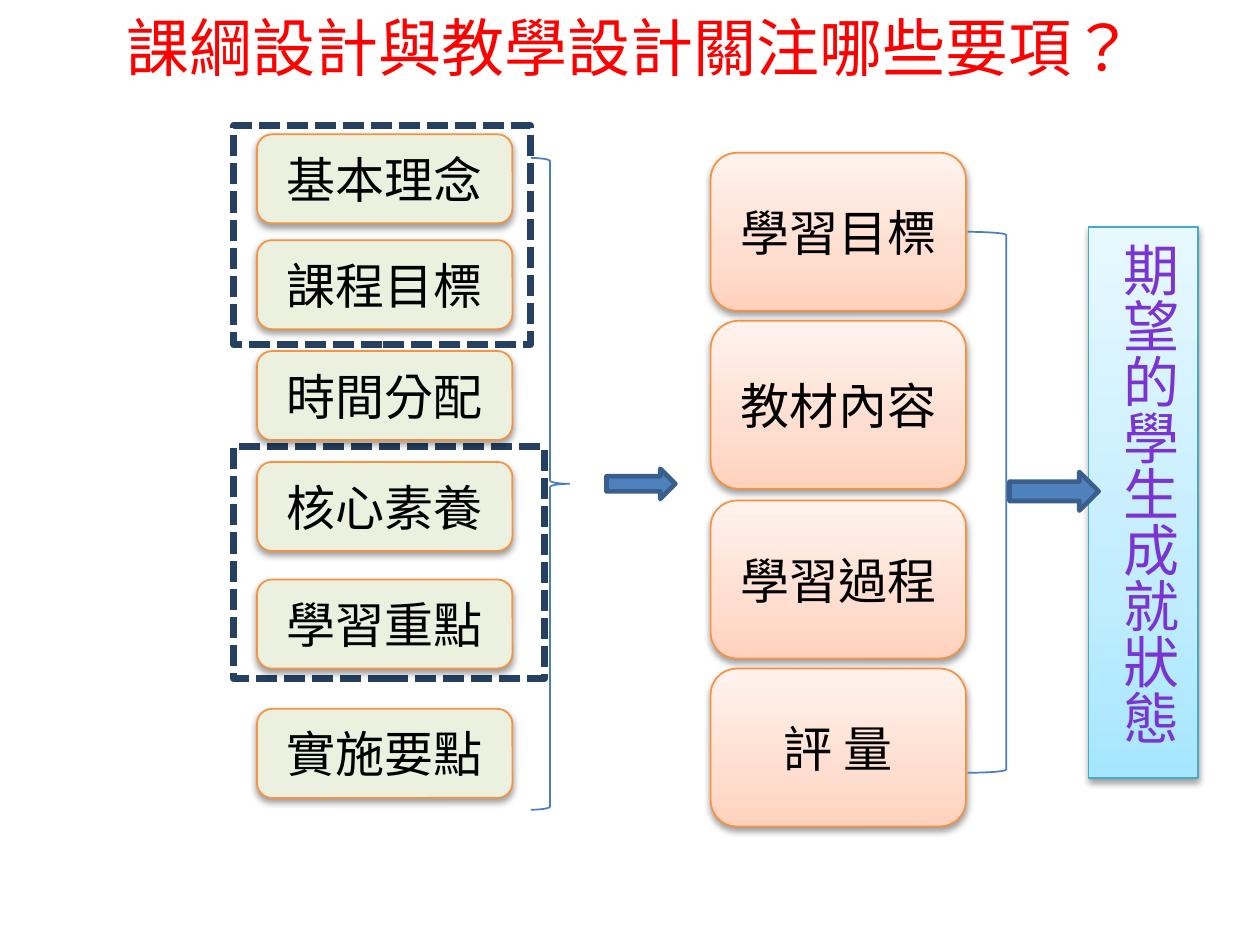
import copy
import pptx
import pptx.util
import pptx.dml.color
import pptx.enum.dml
import pptx.enum.shapes
import pptx.enum.text
import pptx.oxml
import pptx.oxml.ns

Inches = pptx.util.Inches
Pt = pptx.util.Pt
SHAPE = pptx.enum.shapes.MSO_SHAPE
ALIGN = pptx.enum.text.PP_ALIGN
ANCHOR = pptx.enum.text.MSO_ANCHOR
qn = pptx.oxml.ns.qn

FONT = "Noto Sans CJK SC"
COLORS = {
    "title": "FF0000", "text": "000000", "goal": "7B34D2",
    "white": "FFFFFF", "dash": "254061", "green": "EBF1DE",
    "orange": "F69240", "teal": "46AAC5", "brace": "4B7EBC",
    "arrow": "4F81BD", "arrow_edge": "3A5F8C",
}
PEACH = [(0, "FFD2BD"), (0.35, "FFDED0"), (1, "FFF2ED")]
SKY = [(0, "A7E6FF"), (0.35, "C1EDFF"), (1, "E7F8FF")]
SHADOW = (
    f'<a:outerShdw {pptx.oxml.ns.nsdecls("a")} blurRad="{Pt(3.1)}" '
    f'dist="{Pt(1.6)}" dir="5400000" rotWithShape="0">'
    '<a:srgbClr val="000000"><a:alpha val="38000"/></a:srgbClr></a:outerShdw>'
)


def rgb(value):
    return pptx.dml.color.RGBColor.from_string(value)


def write(s, text, size=21, color="text", align=ALIGN.CENTER,
          anchor=ANCHOR.MIDDLE, spacing=None, margins=(0.08, 0.04, 0.08, 0.04)):
    tf = s.text_frame
    tf.word_wrap = True
    tf.auto_size = pptx.enum.text.MSO_AUTO_SIZE.NONE
    tf.vertical_anchor = anchor
    tf.margin_left, tf.margin_top, tf.margin_right, tf.margin_bottom = map(Inches, margins)
    p = tf.paragraphs[0]
    p.alignment = align
    p.line_spacing = spacing
    r = p.add_run()
    r.text = text
    r.font.size = Pt(size)
    r.font.name = FONT
    r.font.color.rgb = rgb(COLORS[color])
    r.font._element.set("lang", "zh-TW")
    ea = pptx.oxml.parse_xml(f'<a:ea {pptx.oxml.ns.nsdecls("a")} typeface="{FONT}"/>')
    r.font._element.find(qn("a:latin")).addnext(ea)


def fill_gradient(s, stops):
    s.fill.gradient()
    s.fill.gradient_angle = 90
    gs_list = s._element.spPr.find(".//" + qn("a:gsLst"))
    gs_list.append(copy.deepcopy(gs_list[0]))
    for stop, (position, color) in zip(s.fill.gradient_stops, stops):
        stop.position = position
        stop.color.rgb = rgb(color)


def add_box(slide, kind, box, line, width=0.75, fill=None, gradient=None, shadow=False):
    s = slide.shapes.add_shape(kind, *map(Inches, box))
    s.shadow.inherit = False
    if gradient:
        fill_gradient(s, gradient)
    elif fill:
        s.fill.solid()
        s.fill.fore_color.rgb = rgb(COLORS[fill])
    else:
        s.fill.background()
    s.line.color.rgb = rgb(COLORS[line])
    s.line.width = Pt(width)
    if shadow:
        s._element.spPr.find(qn("a:effectLst")).append(pptx.oxml.parse_xml(SHADOW))
    return s


def add_title(slide, box, text):
    s = slide.shapes.title
    s.left, s.top, s.width, s.height = map(Inches, box)
    write(s, text, size=27, color="title", anchor=ANCHOR.TOP, spacing=1.0)


def add_arrow(slide, box):
    add_box(slide, SHAPE.RIGHT_ARROW, box, "arrow_edge", 2, fill="arrow")


def add_curriculum(slide, box):
    x, y, w, h = box
    for top, width, height in [(1.91, 1.85, 1.38), (0, 1.77, 1.3)]:
        s = add_box(slide, SHAPE.RECTANGLE, (x, y + top, width, height),
                    "dash", 3, fill="white")
        s.line.dash_style = pptx.enum.dml.MSO_LINE.SQUARE_DOT
    add_box(slide, SHAPE.RIGHT_BRACE, (x + w - 0.23, y + 0.19, 0.23, h - 0.19), "brace")
    items = [("基本理念", 0.05), ("課程目標", 0.68), ("時間分配", 1.34),
             ("核心素養", 2), ("學習重點", 2.7), ("實施要點", 3.47)]
    for text, top in items:
        s = add_box(slide, SHAPE.ROUNDED_RECTANGLE, (x + 0.14, y + top, 1.52, 0.53),
                    "orange", fill="green", shadow=True)
        write(s, text)


def add_teaching(slide, box):
    x, y, w, h = box
    items = [("學習目標", 0, 0.94), ("教材內容", 1, 1),
             ("學習過程", 2.07, 0.94), ("評 量", 3.07, 0.94)]
    for text, top, height in items:
        s = add_box(slide, SHAPE.ROUNDED_RECTANGLE, (x, y + top, 1.52, height),
                    "orange", gradient=PEACH, shadow=True)
        write(s, text)
    add_box(slide, SHAPE.RIGHT_BRACKET, (x + w - 0.23, y + 0.47, 0.23, h - 0.79), "brace")


def add_goal(slide, box, text):
    s = add_box(slide, SHAPE.RECTANGLE, box, "teal", gradient=SKY, shadow=True)
    write(s, text, size=24, color="goal", align=ALIGN.LEFT, anchor=ANCHOR.TOP,
          spacing=Pt(31.5), margins=(0.05, 0.09, 0.05, 0.05))
    s.text_frame._txBody.bodyPr.set("vert", "eaVert")


def main():
    prs = pptx.Presentation()
    prs.slide_width = Inches(7.5)
    prs.slide_height = prs.slide_width * 3 // 4
    slide = prs.slides.add_slide(prs.slide_layouts[5])
    add_title(slide, (0.38, 0.01, 6.75, 0.71), "課綱設計與教學設計關注哪些要項？")
    add_curriculum(slide, (1.39, 0.75, 2, 4.07))
    add_arrow(slide, (3.61, 2.79, 0.41, 0.18))
    add_teaching(slide, (4.23, 0.91, 1.76, 4.01))
    add_goal(slide, (6.48, 1.35, 0.65, 3.28), "期望的學生成就狀態")
    add_arrow(slide, (6.01, 2.81, 0.53, 0.23))
    prs.save("out.pptx")


if __name__ == "__main__":
    main()
